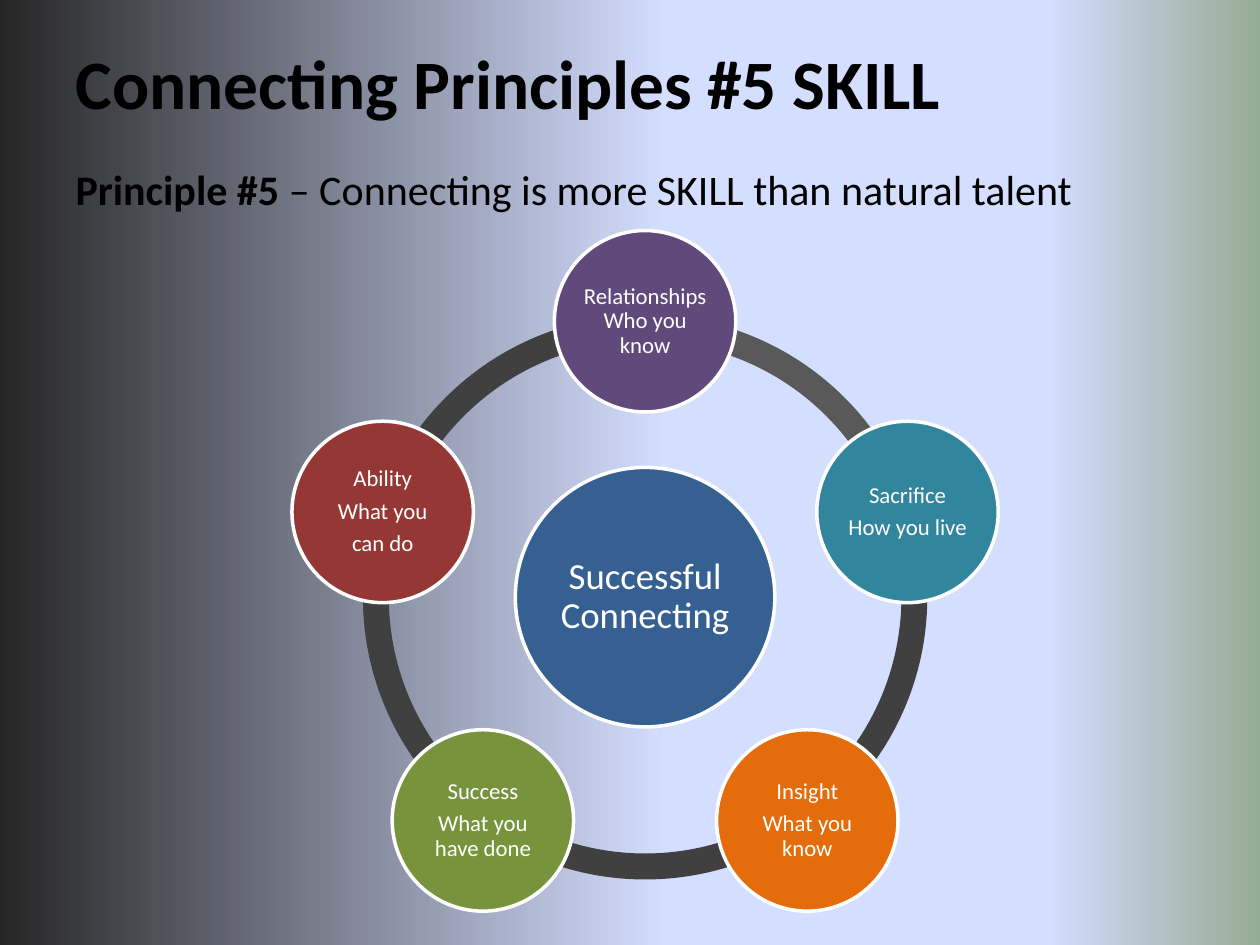
from copy import deepcopy
from math import cos, radians, sin

from lxml import etree
from pptx import Presentation
from pptx.dml.color import RGBColor
from pptx.enum.shapes import MSO_SHAPE
from pptx.enum.text import MSO_ANCHOR, PP_ALIGN
from pptx.oxml.ns import qn
from pptx.util import Inches, Pt

COLORS = {
    "text": "000000", "white": "FFFFFF", "arc": "404040", "arc_light": "595959",
    "hub": "376092", "relationships": "604A7B", "sacrifice": "31859C",
    "insight": "E46C0A", "success": "77933C", "ability": "953735",
}
BACKGROUND = [(0, "262626"), (53, "D4DEFF"), (83, "D4DEFF"), (100, "96AB94")]
NODES = [
    ("relationships", ["Relationships Who you know"]),
    ("sacrifice", ["Sacrifice", "How you live"]),
    ("insight", ["Insight", "What you know"]),
    ("success", ["Success", "What you have done"]),
    ("ability", ["Ability", "What you", "can do"]),
]
CX, CY, RADIUS = 5.12, 4.74, 2.19
ARC_SIZE, HUB_SIZE, NODE_SIZE = 4.48, 2.06, 1.44
STEP = 360 / len(NODES)


def format_run(r, size, color, bold=False):
    r.font.name = "Calibri"
    r.font.size = Pt(size)
    r.font.bold = bold
    r.font.color.rgb = RGBColor.from_string(COLORS[color])


def add_circle(x, y, size, color, lines, font_size):
    """Add a white-edged circle centred on x, y with one paragraph per line."""
    sp = s.shapes.add_shape(MSO_SHAPE.OVAL, Inches(x - size / 2), Inches(y - size / 2),
                            Inches(size), Inches(size))
    sp.shadow.inherit = False
    sp.fill.solid()
    sp.fill.fore_color.rgb = RGBColor.from_string(COLORS[color])
    sp.line.color.rgb = RGBColor.from_string(COLORS["white"])
    sp.line.width = Pt(2)
    tf = sp.text_frame
    tf.word_wrap = True
    tf.vertical_anchor = MSO_ANCHOR.MIDDLE
    tf.margin_left = tf.margin_right = tf.margin_top = tf.margin_bottom = Inches(0.01)
    tf.text = "\n".join(lines)
    for p in tf.paragraphs:
        p.alignment = PP_ALIGN.CENTER
        p.line_spacing = 0.9
        p.space_after = Pt(0.35 * font_size)
        format_run(p.runs[0], font_size, "white")


prs = Presentation()
prs.slide_width, prs.slide_height = Inches(10), Inches(7.5)
s = prs.slides.add_slide(prs.slide_layouts[1])

# Background gradient, left to right
fill = s.background.fill
fill.gradient()
fill.gradient_angle = 0
stops = s.element.find(".//" + qn("a:gsLst"))
while len(stops) < len(BACKGROUND):
    stops.append(deepcopy(stops[0]))
for stop, (position, color) in zip(fill.gradient_stops, BACKGROUND):
    stop.position = position / 100
    stop.color.rgb = RGBColor.from_string(color)

# Title and principle
title, body = s.shapes.title, s.placeholders[1]
title.left, title.top, title.width, title.height = (Inches(v) for v in (0.5, 0.3, 9, 0.7))
tf = title.text_frame
tf.text = "Connecting Principles #5 SKILL"
tf.vertical_anchor = MSO_ANCHOR.MIDDLE
tf.paragraphs[0].alignment = PP_ALIGN.LEFT
format_run(tf.paragraphs[0].runs[0], 39.6, "text", bold=True)

body.left, body.top, body.width, body.height = (Inches(v) for v in (0.5, 1.25, 9, 5.45))
p = body.text_frame.paragraphs[0]
for text, bold in [("Principle #5", True),
                   (" – Connecting is more SKILL than natural talent", False)]:
    r = p.add_run()
    r.text = text
    format_run(r, 24, "text", bold)
pPr = p._p.get_or_add_pPr()
pPr.set("marL", str(Inches(0.38)))
pPr.set("indent", str(Inches(-0.38)))
etree.SubElement(pPr, qn("a:buNone"))

# Ring: one arc from each node to the next, clockwise from the top
for i in range(len(NODES)):
    start = (270 + i * STEP) % 360
    arc = s.shapes.add_shape(MSO_SHAPE.BLOCK_ARC, Inches(CX - ARC_SIZE / 2),
                             Inches(CY - ARC_SIZE / 2), Inches(ARC_SIZE), Inches(ARC_SIZE))
    arc.shadow.inherit = False
    arc.fill.solid()
    arc.fill.fore_color.rgb = RGBColor.from_string(COLORS["arc" if i else "arc_light"])
    arc.line.fill.background()
    # Angles are stored in 60000ths of a degree, adjustments in 100000ths
    arc.adjustments[0] = start * 0.6
    arc.adjustments[1] = (start + STEP) % 360 * 0.6
    arc.adjustments[2] = 0.046

add_circle(CX, CY, HUB_SIZE, "hub", ["Successful Connecting"], 21)
for i, (color, lines) in enumerate(NODES):
    angle = radians(270 + i * STEP)
    add_circle(CX + RADIUS * cos(angle), CY + RADIUS * sin(angle),
               NODE_SIZE, color, lines, 13)

prs.save("out.pptx")
